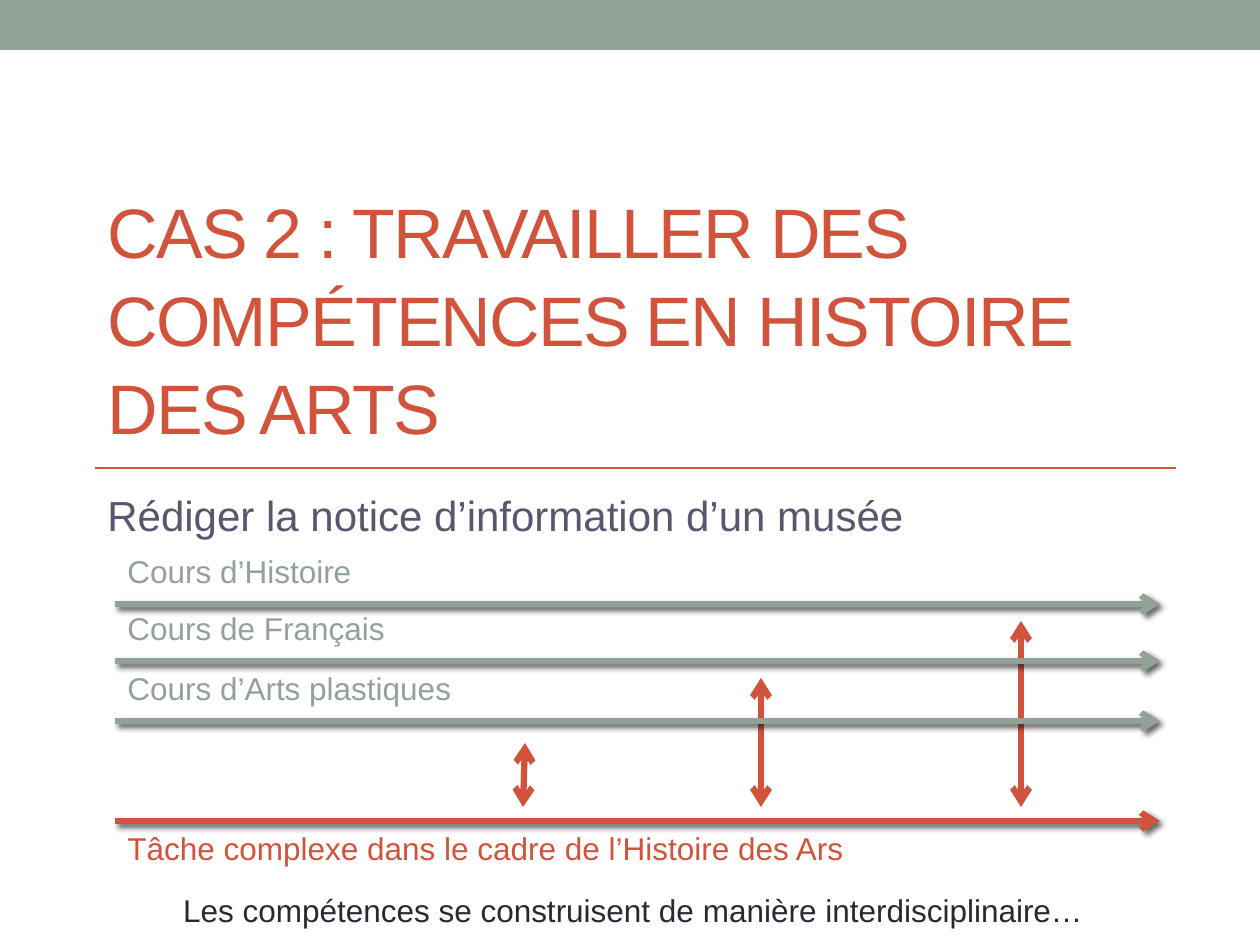
import pptx
import pptx.util
import pptx.dml.color
import pptx.enum.shapes
import pptx.enum.text
import pptx.oxml
import pptx.oxml.ns
from dataclasses import dataclass
from lxml import etree

SCALE = 914400 / 126
WIDE, HIGH = 1260, 945


@dataclass(frozen=True)
class Theme:
    sage: str = "93A299"
    red: str = "D2533C"
    slate: str = "57576E"
    dark: str = "292934"
    font: str = "Arial"
    head: int = 40
    sub: int = 24
    body: int = 18


def px(n):
    return pptx.util.Emu(round(n * SCALE))


def rgb(tone):
    return pptx.dml.color.RGBColor.from_string(tone)


def node(root, tag, **attrs):
    """Append a DrawingML child with the given attributes."""
    return etree.SubElement(root, pptx.oxml.ns.qn(tag), attrs)


def write(frame, text, font, size, tone, align="LEFT", anchor="TOP",
          wrap=True, pitch=None, before=0, track=0):
    frame.word_wrap = wrap
    frame.vertical_anchor = getattr(pptx.enum.text.MSO_ANCHOR, anchor)
    para = frame.paragraphs[0]
    para.alignment = getattr(pptx.enum.text.PP_ALIGN, align)
    para.space_before = pptx.util.Pt(before)
    if pitch:
        para.line_spacing = pitch
    run = para.add_run()
    run.text = text
    run.font.name = font
    run.font.size = pptx.util.Pt(size)
    run.font.color.rgb = rgb(tone)
    if track:
        run.font._element.set("spc", str(track * 100))


class Deck:
    def __init__(self, theme):
        self.theme = theme
        self.file = pptx.Presentation()
        self.file.slide_width = px(WIDE)
        self.file.slide_height = px(HIGH)
        self.slide = self.file.slides.add_slide(self.file.slide_layouts[6])

    def band(self, x, y, w, h, tone):
        kind = pptx.enum.shapes.MSO_SHAPE.RECTANGLE
        shape = self.slide.shapes.add_shape(kind, px(x), px(y), px(w), px(h))
        shape.shadow.inherit = False
        shape.fill.solid()
        shape.fill.fore_color.rgb = rgb(tone)
        shape.line.fill.background()

    def text(self, x, y, w, h, text, size, tone, **look):
        box = self.slide.shapes.add_textbox(px(x), px(y), px(w), px(h))
        write(box.text_frame, text, self.theme.font, size, tone, **look)

    def line(self, start, end, tone, width, ends=(), shade=False):
        """Draw a line; ends lists headEnd and/or tailEnd arrowheads."""
        kind = pptx.enum.shapes.MSO_CONNECTOR.STRAIGHT
        line = self.slide.shapes.add_connector(
            kind, px(start[0]), px(start[1]), px(end[0]), px(end[1]))
        line.line.color.rgb = rgb(tone)
        line.line.width = pptx.util.Pt(width)
        for tip in ends:
            node(line.line._get_or_add_ln(), "a:" + tip, type="arrow")
        fx = node(line._element.spPr, "a:effectLst")
        if shade:
            drop = node(fx, "a:outerShdw", blurRad="38100", dist="25400",
                        dir="2700000", algn="tl", rotWithShape="0")
            black = node(drop, "a:srgbClr", val="000000")
            node(black, "a:alpha", val="60000")

    def course(self, y, label, width, tone, shift):
        """Draw a long time arrow with its label shifted from it."""
        self.line((115, y), (1160, y), tone, 3.5, ["tailEnd"], shade=True)
        self.text(115, y + shift, width, 50, label, self.theme.body, tone,
                  wrap=False)


def main():
    look = Theme()
    deck = Deck(look)
    deck.band(0, 0, WIDE, 50, look.sage)
    deck.line((95, 468), (1176, 468), look.red, 1.5)
    deck.text(95, 189, 1081, 266,
              "CAS 2 : TRAVAILLER DES COMPÉTENCES EN HISTOIRE DES ARTS",
              look.head, look.red, anchor="BOTTOM", pitch=1.05, track=-1)
    deck.text(95, 483, 882, 60, "Rédiger la notice d’information d’un musée",
              look.sub, look.slate, before=3)

    for top, low, y in ((525, 523, 743), (761, 761, 678), (1021, 1021, 621)):
        deck.line((top, y), (low, 807), look.red, 3.58,
                  ["headEnd", "tailEnd"])

    for y, label, width, tone, shift in (
            (721, "Cours d’Arts plastiques", 353, look.sage, -58),
            (821, "Tâche complexe dans le cadre de l’Histoire des Ars", 748,
             look.red, 2),
            (661, "Cours de Français", 285, look.sage, -58),
            (604, "Cours d’Histoire", 252, look.sage, -58)):
        deck.course(y, label, width, tone, shift)

    deck.text(120, 885, 1026, 50,
              "Les compétences se construisent de manière interdisciplinaire…",
              look.body, look.dark, align="CENTER")
    deck.file.save("out.pptx")


if __name__ == "__main__":
    main()
